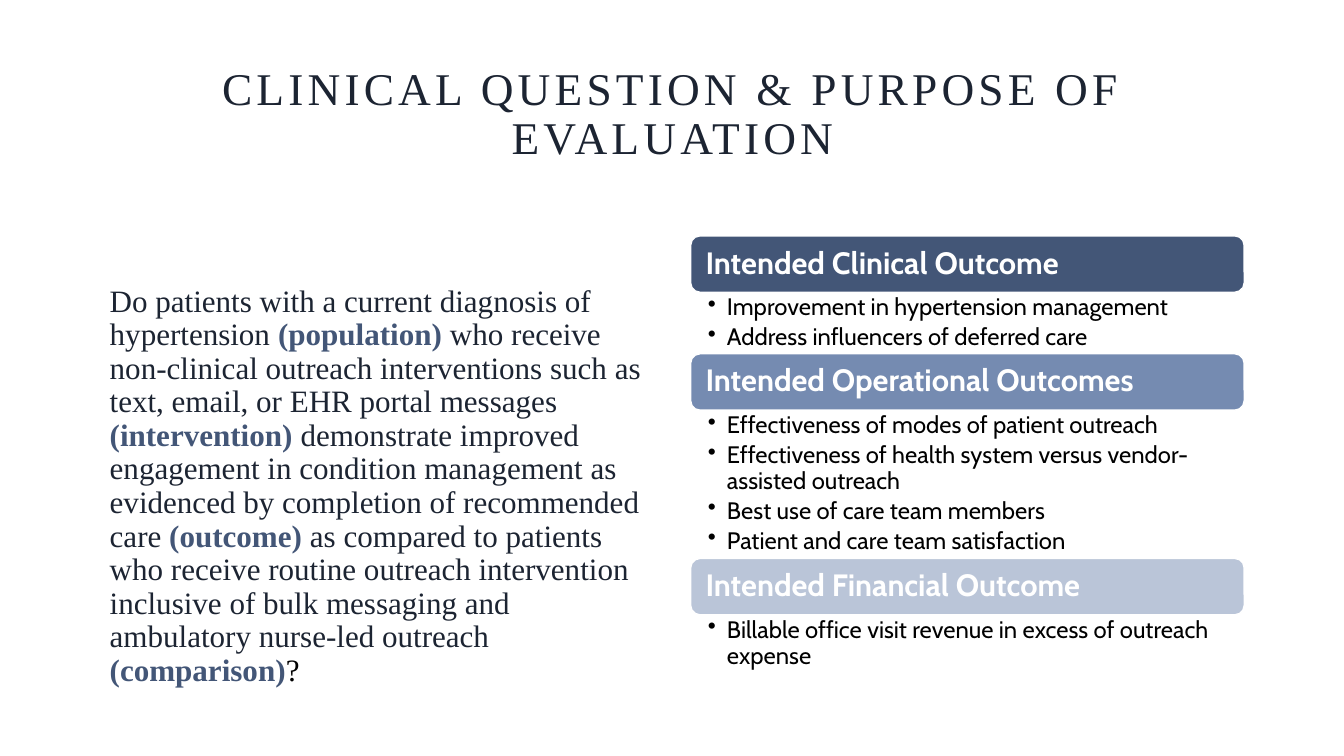
from dataclasses import dataclass

from lxml import etree
from pptx import Presentation
from pptx.dml.color import RGBColor
from pptx.enum.shapes import MSO_SHAPE
from pptx.enum.text import MSO_ANCHOR, MSO_AUTO_SIZE, PP_ALIGN
from pptx.oxml.ns import qn
from pptx.slide import Slide
from pptx.text.text import TextFrame
from pptx.util import Emu, Pt

PX = 9144
ROUND = MSO_SHAPE.ROUNDED_RECTANGLE
TOP, MID, LOW = MSO_ANCHOR.TOP, MSO_ANCHOR.MIDDLE, MSO_ANCHOR.BOTTOM
LEFT, CENTER = PP_ALIGN.LEFT, PP_ALIGN.CENTER
FIXED = MSO_AUTO_SIZE.NONE


@dataclass(frozen=True)
class Theme:
    serif: str = "Times New Roman"
    sans: str = "Cabin"
    ink: str = "1C2432"
    navy: str = "435677"
    blue: str = "758BB1"
    pale: str = "BAC5D8"
    white: str = "FFFFFF"
    black: str = "000000"
    title: float = 32.4
    body: float = 22.2
    head: float = 22
    item: float = 17
    lines: float = 0.9
    gap: float = 3


@dataclass(frozen=True)
class Box:
    x: int
    y: int
    w: int
    h: int

    def emu(self) -> tuple[Emu, Emu, Emu, Emu]:
        return px(self.x), px(self.y), px(self.w), px(self.h)


@dataclass(frozen=True)
class Part:
    text: str
    color: str
    bold: bool = False


@dataclass(frozen=True)
class Band:
    head: str
    fill: str
    items: tuple[str, ...]
    room: int


THEME = Theme()
TITLE = Box(147, 62, 1040, 106)
BODY = Box(99, 225, 550, 451)
BODY_TOP = 58
BAND_X, BAND_Y, BAND_W, BAND_H = 685, 234, 549, 56
INDENT = 19

QUESTION = (
    Part("Do patients with a current diagnosis of hypertension ", THEME.ink),
    Part("(population) ", THEME.navy, True),
    Part("who receive non-clinical outreach interventions such as text, email, "
         "or EHR portal messages ", THEME.ink),
    Part("(intervention) ", THEME.navy, True),
    Part("demonstrate improved engagement in condition management as evidenced "
         "by completion of recommended care ", THEME.ink),
    Part("(outcome) ", THEME.navy, True),
    Part("as compared to patients who receive routine outreach intervention "
         "inclusive of bulk messaging and ambulatory nurse-led outreach ", THEME.ink),
    Part("(comparison)", THEME.navy, True),
    Part("?", THEME.black),
)
BANDS = (
    Band("Intended Clinical Outcome", THEME.navy,
         ("Improvement in hypertension management",
          "Address influencers of deferred care"), 61),
    Band("Intended Operational Outcomes", THEME.blue,
         ("Effectiveness of modes of patient outreach",
          "Effectiveness of health system versus vendor-assisted outreach",
          "Best use of care team members",
          "Patient and care team satisfaction"), 147),
    Band("Intended Financial Outcome", THEME.pale,
         ("Billable office visit revenue in excess of outreach expense",), 56),
)


def px(n: int) -> Emu:
    return Emu(n * PX)


def frame(tf: TextFrame, side: int, top: int, low: int, anchor: MSO_ANCHOR) -> None:
    tf.word_wrap = True
    tf.auto_size = FIXED
    tf.vertical_anchor = anchor
    tf.margin_left = tf.margin_right = px(side)
    tf.margin_top, tf.margin_bottom = px(top), px(low)


def style(tf: TextFrame, font: str, size: float, color: str,
          bold: bool = False, align: PP_ALIGN = LEFT) -> None:
    for para in tf.paragraphs:
        para.alignment = align
        para.line_spacing = THEME.lines
        for run in para.runs:
            run.font.name = font
            run.font.size = Pt(size)
            run.font.bold = bold
            run.font.color.rgb = RGBColor.from_string(color)


def bullet(tf: TextFrame) -> None:
    for para in tf.paragraphs:
        para.space_after = Pt(THEME.gap)
        props = para._p.get_or_add_pPr()
        props.set("marL", str(px(INDENT)))
        props.set("indent", str(-px(INDENT)))
        etree.SubElement(props, qn("a:buChar")).set("char", "•")


def draw_title(slide: Slide) -> None:
    title = slide.shapes.title
    title.left, title.top, title.width, title.height = TITLE.emu()
    tf = title.text_frame
    tf.text = "CLINICAL QUESTION & PURPOSE OF EVALUATION"
    frame(tf, 10, 5, 5, LOW)
    style(tf, THEME.serif, THEME.title, THEME.ink, align=CENTER)
    tf.paragraphs[0].runs[0].font._element.set("spc", "300")


def draw_body(slide: Slide) -> None:
    tf = slide.shapes.add_textbox(*BODY.emu()).text_frame
    frame(tf, 10, BODY_TOP, 5, TOP)
    para = tf.paragraphs[0]
    for part in QUESTION:
        para.add_run().text = part.text
    style(tf, THEME.serif, THEME.body, THEME.ink)
    for run, part in zip(para.runs, QUESTION):
        run.font.bold = part.bold
        run.font.color.rgb = RGBColor.from_string(part.color)


def draw_band(slide: Slide, band: Band, y: int) -> int:
    bar = slide.shapes.add_shape(ROUND, *Box(BAND_X, y, BAND_W, BAND_H).emu())
    bar.shadow.inherit = False
    bar.fill.solid()
    bar.fill.fore_color.rgb = RGBColor.from_string(band.fill)
    bar.line.color.rgb = RGBColor.from_string(THEME.white)
    bar.line.width = Pt(1)
    bar.text_frame.text = band.head
    frame(bar.text_frame, 12, 9, 9, MID)
    style(bar.text_frame, THEME.sans, THEME.head, THEME.white, True)

    y += BAND_H
    tf = slide.shapes.add_textbox(*Box(BAND_X, y, BAND_W, band.room).emu()).text_frame
    tf.text = "\n".join(band.items)
    frame(tf, 17, 3, 3, TOP)
    style(tf, THEME.sans, THEME.item, THEME.black)
    bullet(tf)
    return y + band.room


def main() -> None:
    deck = Presentation()
    deck.slide_width, deck.slide_height = px(1333), px(750)
    slide = deck.slides.add_slide(deck.slide_layouts[5])
    draw_title(slide)
    draw_body(slide)
    y = BAND_Y
    for band in BANDS:
        y = draw_band(slide, band, y)
    deck.save("out.pptx")


if __name__ == "__main__":
    main()
